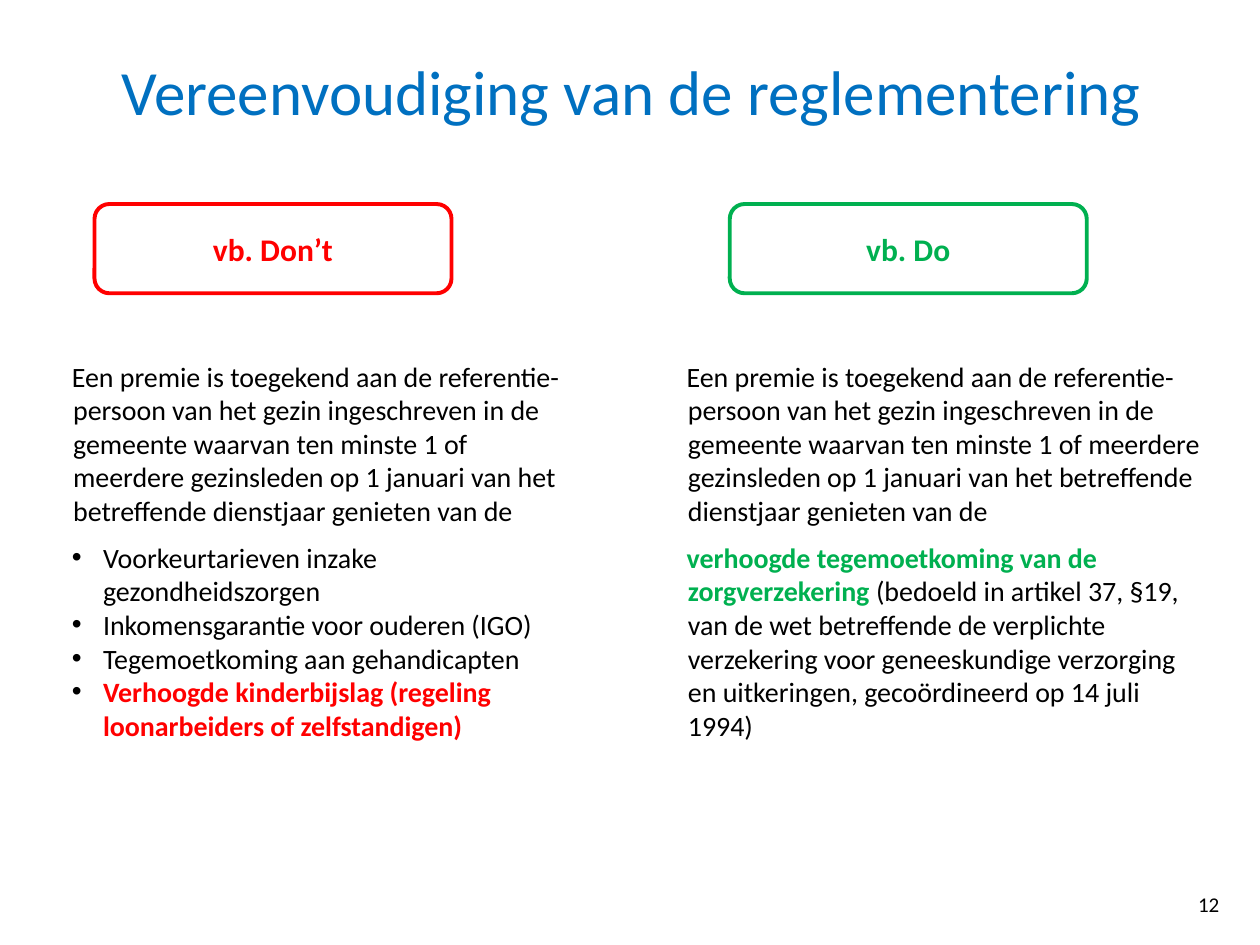
from lxml.etree import SubElement
from pptx import Presentation
from pptx.dml.color import RGBColor
from pptx.enum.shapes import MSO_SHAPE as Shape
from pptx.enum.text import MSO_ANCHOR as Anchor, MSO_AUTO_SIZE as AutoSize, PP_ALIGN as Align
from pptx.oxml.ns import qn
from pptx.util import Pt

BLUE = RGBColor(0x00, 0x70, 0xC0)
RED = RGBColor(0xFF, 0x00, 0x00)
GREEN = RGBColor(0x00, 0xB0, 0x50)
BLACK = RGBColor(0x00, 0x00, 0x00)
WHITE = RGBColor(0xFF, 0xFF, 0xFF)
FONT = "Calibri"

TITLE = "Vereenvoudiging van de reglementering"
PAGE_NUMBER = "12"
INTRO = (
    "Een premie is toegekend aan de referentie- persoon van het gezin "
    "ingeschreven in de gemeente waarvan ten minste 1 of meerdere gezinsleden "
    "op 1 januari van het betreffende dienstjaar genieten van de"
)
COLUMNS = [
    {
        "label": "vb. Don’t", "accent": RED, "label_left": 54,
        "left": 20.2, "width": 312, "height": 244, "bulleted": True,
        "details": [
            [("Voorkeurtarieven inzake gezondheidszorgen", False)],
            [("Inkomensgarantie voor ouderen (IGO)", False)],
            [("Tegemoetkoming aan gehandicapten", False)],
            [("Verhoogde kinderbijslag (regeling loonarbeiders of zelfstandigen)", True)],
        ],
    },
    {
        "label": "vb. Do", "accent": GREEN, "label_left": 417,
        "left": 371.5, "width": 322, "height": 277, "bulleted": False,
        "details": [
            [
                ("verhoogde tegemoetkoming van de zorgverzekering ", True),
                ("(bedoeld in artikel 37, §19, van de wet betreffende de verplichte "
                 "verzekering voor geneeskundige verzorging en uitkeringen, "
                 "gecoördineerd op 14 juli 1994)", False),
            ],
        ],
    },
]


def place(shape, left, top, width, height):
    shape.left, shape.top, shape.width, shape.height = map(Pt, (left, top, width, height))


def style(font, size, color, bold=False):
    font.name, font.size, font.bold = FONT, Pt(size), bold
    font.color.rgb = color


def write_paragraph(paragraph, pieces, accent, bulleted, space_before):
    properties = paragraph._p.get_or_add_pPr()
    margin, indent = (31.5, -17.8) if bulleted else (14.4, -0.7)
    properties.set("marL", str(Pt(margin)))
    properties.set("indent", str(Pt(indent)))
    if bulleted:
        bullet_color = SubElement(properties, qn("a:buClr"))
        SubElement(bullet_color, qn("a:srgbClr"), val=str(BLACK))
    else:
        SubElement(properties, qn("a:buNone"))
    paragraph.space_before = Pt(space_before)
    for text, highlighted in pieces:
        run = paragraph.add_run()
        run.text = text
        style(run.font, 16, accent if highlighted else BLACK, highlighted)


def fill_column(body, column):
    place(body, column["left"], 185, column["width"], column["height"])
    frame = body.text_frame
    frame.auto_size = AutoSize.NONE
    frame.margin_top = Pt(20.3)
    accent = column["accent"]
    write_paragraph(frame.paragraphs[0], [(INTRO, False)], accent, False, 0)
    for position, pieces in enumerate(column["details"]):
        gap = 7.5 if position == 0 else 0
        write_paragraph(frame.add_paragraph(), pieces, accent, column["bulleted"], gap)


def add_label(slide, column):
    label = slide.shapes.add_shape(
        Shape.ROUNDED_RECTANGLE, Pt(column["label_left"]), Pt(116.6), Pt(204), Pt(51))
    label.shadow.inherit = False
    label.fill.solid()
    label.fill.fore_color.rgb = WHITE
    label.line.color.rgb = column["accent"]
    label.line.width = Pt(2.25)
    label.text_frame.text = column["label"]
    label.text_frame.vertical_anchor = Anchor.MIDDLE
    paragraph = label.text_frame.paragraphs[0]
    paragraph.alignment = Align.CENTER
    style(paragraph.runs[0].font, 18, column["accent"], True)


def main():
    deck = Presentation()
    deck.slide_width, deck.slide_height = Pt(720), Pt(540)
    slide = deck.slides.add_slide(deck.slide_layouts[3])

    title, *bodies = slide.placeholders
    place(title, 36.7, 15.1, 648, 72.7)
    title.text_frame.text = TITLE
    title.text_frame.vertical_anchor = Anchor.MIDDLE
    heading = title.text_frame.paragraphs[0]
    heading.alignment = Align.CENTER
    style(heading.runs[0].font, 36, BLUE)

    for body, column in zip(bodies, COLUMNS):
        fill_column(body, column)
        add_label(slide, column)

    page = slide.shapes.add_textbox(Pt(677.5), Pt(506), Pt(29.5), Pt(21.6))
    page.text_frame.word_wrap = True
    page.text_frame.text = PAGE_NUMBER
    style(page.text_frame.paragraphs[0].runs[0].font, 12, BLACK)

    deck.save("out.pptx")


if __name__ == "__main__":
    main()
